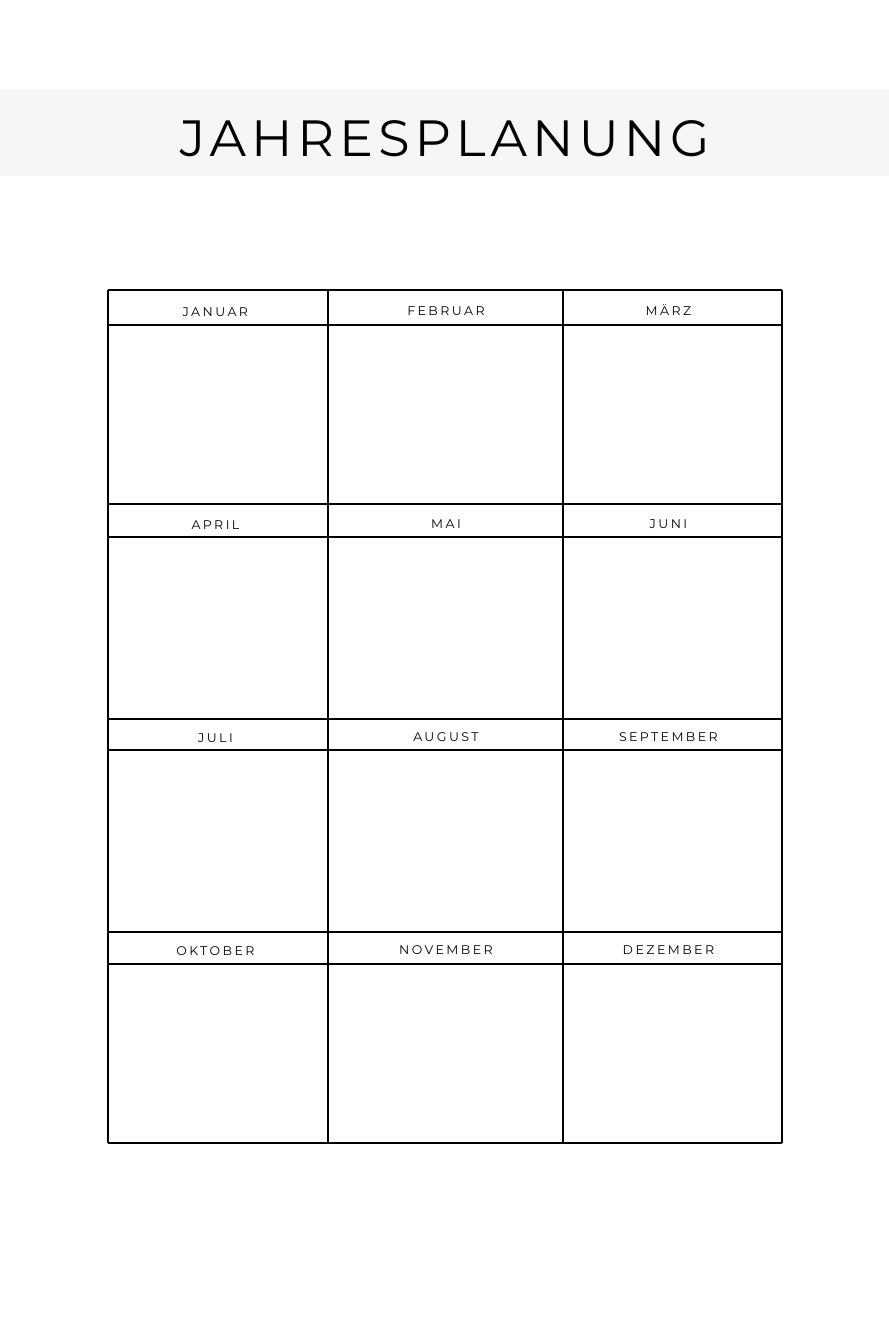
"""Build a yearly planner page with a titled band and a grid of twelve months."""
from dataclasses import dataclass

from pptx import Presentation
from pptx.dml.color import RGBColor
from pptx.enum.shapes import MSO_CONNECTOR as Connector, MSO_SHAPE as Shape
from pptx.enum.text import MSO_AUTO_SIZE as AutoSize, PP_ALIGN as Align
from pptx.oxml.ns import qn
from pptx.slide import Slide
from pptx.util import Emu, Pt

BLACK = RGBColor(0x00, 0x00, 0x00)
BAND_GRAY = RGBColor(0xF6, 0xF6, 0xF6)
FONT = "Montserrat"
EMU_PER_PX = 6284.5
PAGE_WIDTH, PAGE_HEIGHT = 889, 1344

COLUMN_EDGES = (108, 328, 563, 782)
ROW_EDGES = (290, 325, 504, 537, 719, 750, 932, 964, 1143)
QUARTER_STEP = 213
MONTHS = (
    ("JANUAR", "FEBRUAR", "MÄRZ"),
    ("APRIL", "MAI", "JUNI"),
    ("JULI", "AUGUST", "SEPTEMBER"),
    ("OKTOBER", "NOVEMBER", "DEZEMBER"),
)


@dataclass(frozen=True)
class TextStyle:
    size: float
    line_height: float
    letter_spacing: float


@dataclass(frozen=True)
class Box:
    left: int
    top: int
    width: int
    height: int


TITLE_STYLE = TextStyle(25.2, 35.3, 2.5)
MONTH_STYLE = TextStyle(6.2, 8.7, 1.2)
BAND = Box(0, 89, PAGE_WIDTH, 87)
TITLE = Box(48, 95, 794, 68)
FIRST_QUARTER = (Box(116, 301, 199, 16), Box(340, 300, 212, 16), Box(573, 300, 191, 16))


def px(length: int) -> Emu:
    return Emu(round(length * EMU_PER_PX))


def add_line(slide: Slide, x1: int, y1: int, x2: int, y2: int) -> None:
    connector = slide.shapes.add_connector(Connector.STRAIGHT, px(x1), px(y1), px(x2), px(y2))
    connector.line.color.rgb = BLACK
    connector.line.width = Pt(0.89)
    properties = connector._element.spPr
    properties.append(properties.makeelement(qn("a:effectLst"), {}))


def add_grid(slide: Slide) -> None:
    for x in COLUMN_EDGES:
        add_line(slide, x, ROW_EDGES[0], x, ROW_EDGES[-1])
    for y in ROW_EDGES:
        add_line(slide, COLUMN_EDGES[0], y, COLUMN_EDGES[-1], y)


def add_band(slide: Slide, box: Box) -> None:
    band = slide.shapes.add_shape(
        Shape.RECTANGLE, px(box.left), px(box.top), px(box.width), px(box.height)
    )
    band.shadow.inherit = False
    band.fill.solid()
    band.fill.fore_color.rgb = BAND_GRAY
    band.line.fill.background()


def add_text(slide: Slide, text: str, box: Box, style: TextStyle) -> None:
    textbox = slide.shapes.add_textbox(px(box.left), px(box.top), px(box.width), px(box.height))
    frame = textbox.text_frame
    frame.margin_left = frame.margin_top = frame.margin_right = frame.margin_bottom = 0
    frame.word_wrap = True
    frame.auto_size = AutoSize.SHAPE_TO_FIT_TEXT
    paragraph = frame.paragraphs[0]
    paragraph.text = text
    paragraph.alignment = Align.CENTER
    paragraph.line_spacing = Pt(style.line_height)
    paragraph.font.name = FONT
    paragraph.font.size = Pt(style.size)
    paragraph.font.color.rgb = BLACK
    character_defaults = paragraph._p.get_or_add_pPr().get_or_add_defRPr()
    character_defaults.set("spc", str(round(style.letter_spacing * 100)))


def add_months(slide: Slide) -> None:
    for quarter, months in enumerate(MONTHS):
        for month, first in zip(months, FIRST_QUARTER):
            top = first.top + quarter * QUARTER_STEP
            add_text(slide, month, Box(first.left, top, first.width, first.height), MONTH_STYLE)


def main() -> None:
    presentation = Presentation()
    presentation.slide_width = px(PAGE_WIDTH)
    presentation.slide_height = px(PAGE_HEIGHT)
    slide = presentation.slides.add_slide(presentation.slide_layouts[6])
    add_grid(slide)
    add_months(slide)
    add_band(slide, BAND)
    add_text(slide, "JAHRESPLANUNG", TITLE, TITLE_STYLE)
    presentation.save("out.pptx")


if __name__ == "__main__":
    main()
